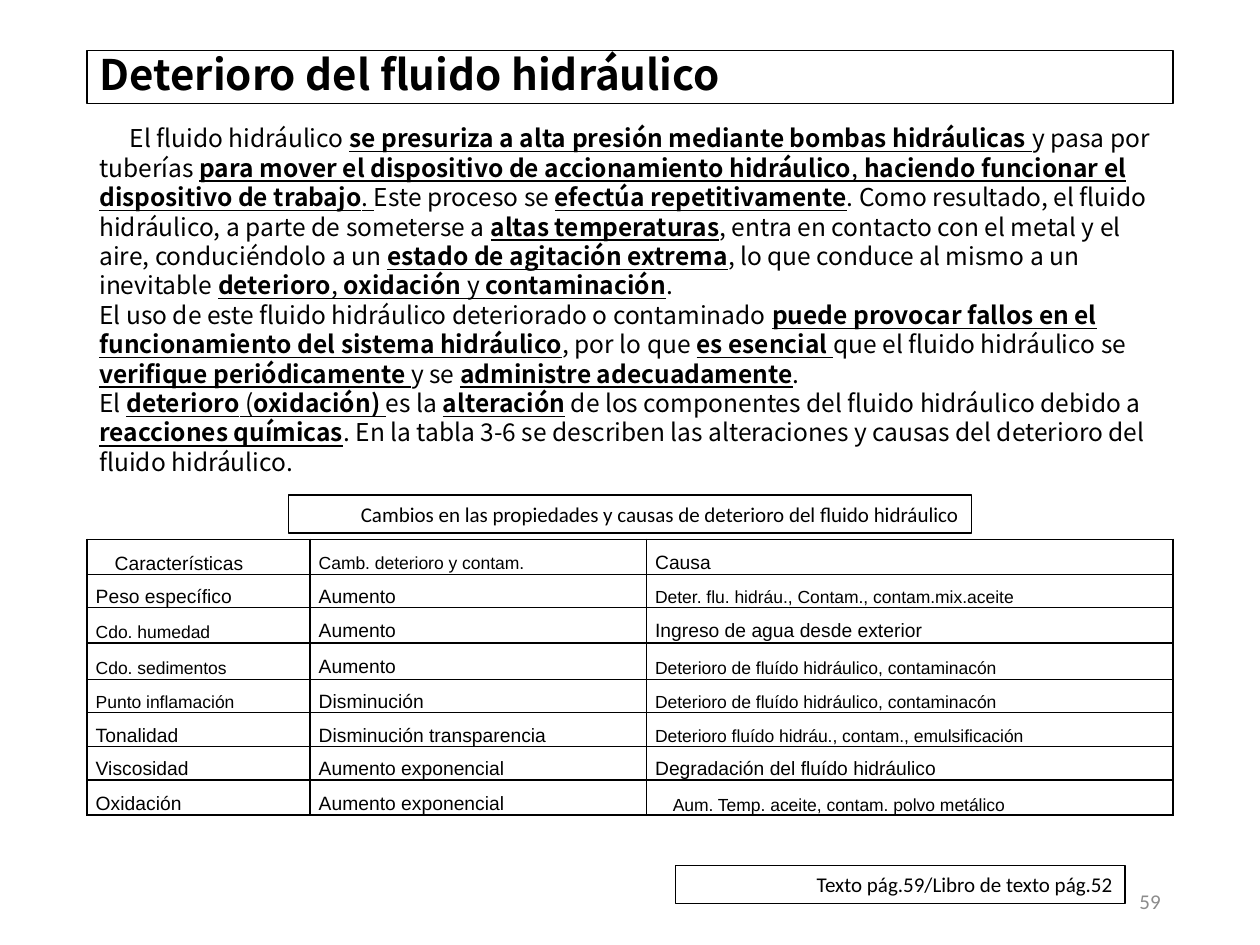
from pptx import Presentation
from pptx.dml.color import RGBColor
from pptx.enum.shapes import MSO_SHAPE
from pptx.enum.text import MSO_ANCHOR, PP_ALIGN
from pptx.oxml import parse_xml
from pptx.oxml.ns import nsdecls
from pptx.util import Inches, Pt

RECTANGLE = MSO_SHAPE.RECTANGLE
MIDDLE, TOP = MSO_ANCHOR.MIDDLE, MSO_ANCHOR.TOP
LEFT, RIGHT, JUSTIFY = PP_ALIGN.LEFT, PP_ALIGN.RIGHT, PP_ALIGN.JUSTIFY
BLACK, GRAY = "000000", "8C8C8C"
HEADING_FONT, LABEL_FONT, TABLE_FONT = "Noto Sans CJK JP", "Calibri", "Arial"

BODY = [
    "El fluido hidráulico _*se presuriza a alta presión mediante bombas hidráulicas *_y pasa por "
    "tuberías _*para mover el dispositivo de accionamiento hidráulico*, *haciendo funcionar el "
    "dispositivo de trabajo*. _Este proceso se _*efectúa repetitivamente*_. Como resultado, el "
    "fluido hidráulico, a parte de someterse a _*altas temperaturas*_, entra en contacto con el "
    "metal y el aire, conduciéndolo a un _*estado de agitación extrema*_, lo que conduce al mismo "
    "a un inevitable _*deterioro*, *oxidación* y *contaminación*_.",
    "El uso de este fluido hidráulico deteriorado o contaminado _*puede provocar fallos en el "
    "funcionamiento del sistema hidráulico*_, por lo que _*es esencial* _que el fluido hidráulico "
    "se _*verifique periódicamente *_y se _*administre adecuadamente*_.",
    "El _*deterioro* (*oxidación)* _es la _*alteración*_ de los componentes del fluido hidráulico "
    "debido a _*reacciones químicas*_. En la tabla 3-6 se describen las alteraciones y causas del "
    "deterioro del fluido hidráulico.",
]

COLUMN_WIDTHS = [1.77, 2.67, 4.18]
ROW_HEIGHTS = [0.24, 0.23, 0.28, 0.29, 0.23, 0.27, 0.26, 0.27]
ROWS = [
    ("Características", "Camb. deterioro y contam.", "Causa"),
    ("Peso específico", "Aumento", "Deter. flu. hidráu., Contam., contam.mix.aceite"),
    ("Cdo. humedad", "Aumento", "Ingreso de agua desde exterior"),
    ("Cdo. sedimentos", "Aumento", "Deterioro de fluído hidráulico, contaminacón"),
    ("Punto inflamación", "Disminución", "Deterioro de fluído hidráulico, contaminacón"),
    ("Tonalidad", "Disminución transparencia", "Deterioro fluído hidráu., contam., emulsificación"),
    ("Viscosidad", "Aumento exponencial", "Degradación del fluído hidráulico"),
    ("Oxidación", "Aumento exponencial", "Aum. Temp. aceite, contam. polvo metálico"),
]
SIZES = [(11, 10, 11), (11, 11, 10), (10, 11, 11), (10, 11, 10),
         (10, 11, 10), (11, 11, 10), (11, 11, 11), (11, 11, 10)]
INDENTS = {(0, 0): 0.15, (7, 2): 0.14}


def color(value):
    return RGBColor.from_string(value)


def place(shape, box):
    shape.left, shape.top, shape.width, shape.height = map(Inches, box)


def style_run(run, font, size, fill=BLACK, bold=False, underline=False):
    run.font.name = font
    run.font.size = Pt(size)
    run.font.color.rgb = color(fill)
    run.font.bold = bold
    run.font.underline = underline


def set_indent(paragraph, inches):
    properties = paragraph._p.get_or_add_pPr()
    properties.set("marL", "0")
    properties.set("indent", str(Inches(inches)))


def write_line(text_frame, text, alignment, anchor, **run_style):
    text_frame.text = text
    text_frame.word_wrap = True
    text_frame.vertical_anchor = anchor
    paragraph = text_frame.paragraphs[0]
    paragraph.alignment = alignment
    style_run(paragraph.runs[0], **run_style)
    return paragraph


def outline(shape):
    shape.line.color.rgb = color(BLACK)
    shape.line.width = Pt(0.75)


def fill_title(slide, box):
    title = slide.shapes.title
    place(title, box)
    outline(title)
    paragraph = write_line(title.text_frame, "Deterioro del fluido hidráulico", LEFT, MIDDLE,
                           font=HEADING_FONT, size=24, bold=True)
    paragraph.line_spacing = 0.9


def add_body(slide, box):
    text_frame = slide.shapes.add_textbox(*map(Inches, box)).text_frame
    text_frame.word_wrap = True
    for index, text in enumerate(BODY):
        paragraph = text_frame.add_paragraph() if index else text_frame.paragraphs[0]
        paragraph.line_spacing = Pt(16.8)
        for underline, part in enumerate(text.split("_")):
            for bold, piece in enumerate(part.split("*")):
                if piece:
                    run = paragraph.add_run()
                    run.text = piece
                    style_run(run, HEADING_FONT, 14,
                              bold=bold % 2 == 1, underline=underline % 2 == 1)
    set_indent(text_frame.paragraphs[0], 0.24)


def add_label(slide, box, text):
    label = slide.shapes.add_shape(RECTANGLE, *map(Inches, box))
    label.shadow.inherit = False
    label.fill.background()
    outline(label)
    write_line(label.text_frame, text, RIGHT, TOP, font=LABEL_FONT, size=12)


def add_page_number(slide, box, text):
    number = slide.shapes.add_textbox(*map(Inches, box))
    write_line(number.text_frame, text, RIGHT, MIDDLE, font=LABEL_FONT, size=12, fill=GRAY)


def add_borders(cell):
    properties = cell._tc.get_or_add_tcPr()
    for index, side in enumerate(("lnL", "lnR", "lnT", "lnB")):
        properties.insert(index, parse_xml(
            f'<a:{side} {nsdecls("a")} w="{Pt(1)}"><a:solidFill>'
            f'<a:srgbClr val="{BLACK}"/></a:solidFill></a:{side}>'))


def fill_cell(cell, text, size, indent):
    cell.fill.background()
    cell.margin_left = cell.margin_right = Inches(0.07)
    cell.margin_top = cell.margin_bottom = 0
    cell.vertical_anchor = MIDDLE
    cell.text = text
    paragraph = cell.text_frame.paragraphs[0]
    paragraph.alignment = LEFT if indent else JUSTIFY
    paragraph.line_spacing = Pt(20 if indent else 19)
    if indent:
        set_indent(paragraph, indent)
    style_run(paragraph.runs[0], TABLE_FONT, size)
    add_borders(cell)


def add_properties_table(slide, box):
    table = slide.shapes.add_table(len(ROWS), len(COLUMN_WIDTHS), *map(Inches, box)).table
    table.first_row = table.horz_banding = False
    for column, width in zip(table.columns, COLUMN_WIDTHS):
        column.width = Inches(width)
    for row, height in zip(table.rows, ROW_HEIGHTS):
        row.height = Inches(height)
    for row_index, (texts, sizes) in enumerate(zip(ROWS, SIZES)):
        for column_index, (text, size) in enumerate(zip(texts, sizes)):
            position = (row_index, column_index)
            fill_cell(table.cell(*position), text, size, INDENTS.get(position))


def main():
    presentation = Presentation()
    presentation.slide_width = Inches(10)
    presentation.slide_height = Inches(7.5)
    slide = presentation.slides.add_slide(presentation.slide_layouts.get_by_name("Title Only"))
    fill_title(slide, (0.69, 0.4, 8.62, 0.42))
    add_page_number(slide, (7.06, 6.95, 2.25, 0.4), "59")
    add_body(slide, (0.69, 0.93, 8.63, 1.76))
    add_label(slide, (2.29, 3.93, 5.42, 0.3),
              "Cambios en las propiedades y causas de deterioro del fluido hidráulico")
    add_properties_table(slide, (0.69, 4.28, 8.62, 2.08))
    add_label(slide, (5.36, 6.87, 3.57, 0.3), "Texto pág.59/Libro de texto pág.52")
    presentation.save("out.pptx")


if __name__ == "__main__":
    main()
